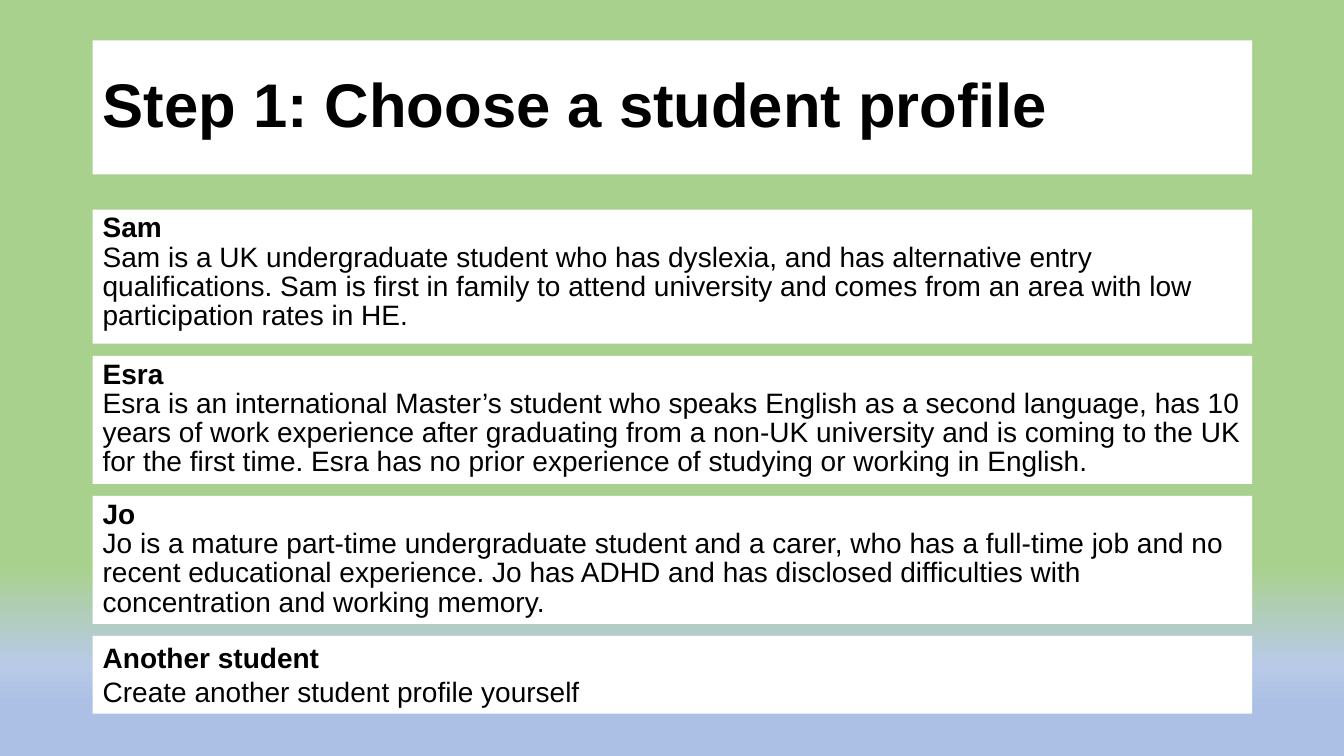
from dataclasses import dataclass

from lxml.etree import SubElement as Sub
from pptx import Presentation
from pptx.dml.color import RGBColor as RGB
from pptx.enum.text import MSO_ANCHOR as ANCHOR, MSO_AUTO_SIZE as FIT, PP_ALIGN as ALIGN
from pptx.oxml.ns import qn
from pptx.util import Inches, Pt


@dataclass(frozen=True)
class Theme:
    font: str = "Arial"
    ink: str = "000000"
    panel: str = "FFFFFF"
    title_size: int = 44
    body_size: int = 20
    backdrop: tuple = ((75, "A9D18E"), (88, "B9CAE8"), (93, "ABC0E4"),
                       (100, "ABC0E4"), (100, "C7D5ED"))


class Deck:
    left, width = 0.92, 11.5

    def __init__(self, theme):
        self.theme = theme
        self.prs = Presentation()
        self.prs.slide_width, self.prs.slide_height = Inches(13.33), Inches(7.5)
        self.s = self.prs.slides.add_slide(self.prs.slide_layouts[6])

    def background(self):
        fill = self.s.background.fill
        fill.gradient()
        fill.gradient_angle = 270
        stops = self.s.element.find(".//" + qn("a:gsLst"))
        for stop in list(stops):
            stops.remove(stop)
        for pos, color in self.theme.backdrop:
            stop = Sub(stops, qn("a:gs"), pos=str(pos * 1000))
            Sub(stop, qn("a:srgbClr"), val=color)

    def panel(self, top, height, **frame):
        sp = self.s.shapes.add_textbox(
            Inches(self.left), Inches(top), Inches(self.width), Inches(height))
        sp.fill.solid()
        sp.fill.fore_color.rgb = RGB.from_string(self.theme.panel)
        for name, value in {"word_wrap": True, **frame}.items():
            setattr(sp.text_frame, name, value)
        return sp.text_frame

    def paragraph(self, p, text, size, bold, spacing):
        p.alignment = ALIGN.LEFT
        p.line_spacing = spacing
        r = p.add_run()
        r.text = text
        style = {"name": self.theme.font, "size": Pt(size), "bold": bold}
        for name, value in style.items():
            setattr(r.font, name, value)
        r.font.color.rgb = RGB.from_string(self.theme.ink)

    def title(self, text, top, height):
        tf = self.panel(top, height, vertical_anchor=ANCHOR.MIDDLE)
        self.paragraph(tf.paragraphs[0], text, self.theme.title_size, True, 0.9)

    def profile(self, name, text, top, height, spacing, fit):
        tf = self.panel(top, height, vertical_anchor=ANCHOR.TOP, auto_size=fit)
        size = self.theme.body_size
        self.paragraph(tf.paragraphs[0], name, size, True, spacing)
        self.paragraph(tf.add_paragraph(), text, size, False, spacing)


PROFILES = [
    ("Sam", "Sam is a UK undergraduate student who has dyslexia, and has alternative "
     "entry qualifications. Sam is first in family to attend university and comes "
     "from an area with low participation rates in HE.", 1.33, 0.87, FIT.NONE),
    ("Esra", "Esra is an international Master’s student who speaks English as a second "
     "language, has 10 years of work experience after graduating from a non-UK "
     "university and is coming to the UK for the first time. Esra has no prior "
     "experience of studying or working in English.", 1.27, 0.87, FIT.SHAPE_TO_FIT_TEXT),
    ("Jo", "Jo is a mature part-time undergraduate student and a carer, who has a "
     "full-time job and no recent educational experience. Jo has ADHD and has "
     "disclosed difficulties with concentration and working memory.",
     1.27, 0.87, FIT.SHAPE_TO_FIT_TEXT),
    ("Another student", "Create another student profile yourself",
     0.77, None, FIT.SHAPE_TO_FIT_TEXT),
]


def main():
    deck = Deck(Theme())
    deck.background()
    deck.title("Step 1: Choose a student profile", 0.4, 1.33)
    top, gap = 2.08, 0.12
    for name, text, height, spacing, fit in PROFILES:
        deck.profile(name, text, top, height, spacing, fit)
        top += height + gap
    deck.prs.save("out.pptx")


if __name__ == "__main__":
    main()
